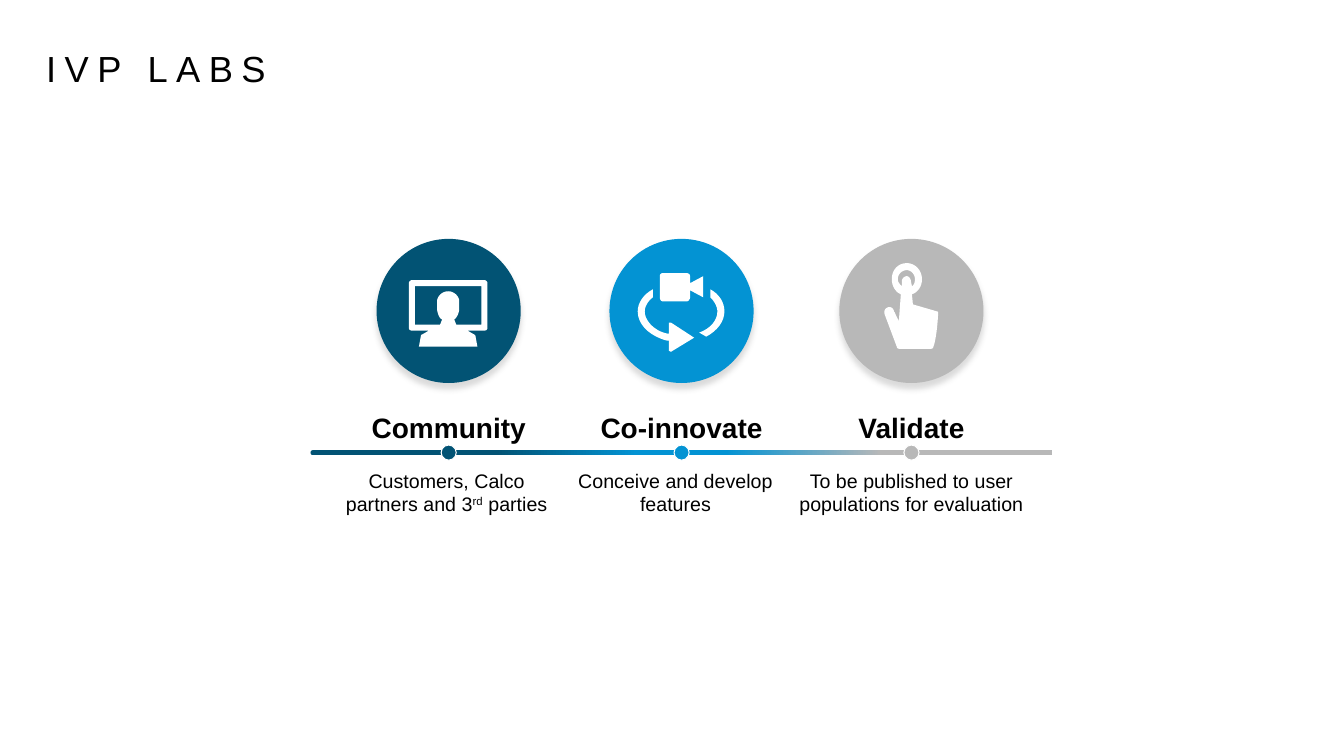
"""Build the IVP LABS slide: three stages with icons along a gradient line."""
from pptx import Presentation
from pptx.dml.color import RGBColor
from pptx.enum.shapes import MSO_SHAPE
from pptx.enum.text import MSO_ANCHOR, PP_ALIGN
from pptx.oxml import parse_xml
from pptx.oxml.ns import nsdecls, qn
from pptx.util import Emu, Inches, Pt


def color(hex_value):
    """Turn a hex string into a colour."""
    return RGBColor.from_string(hex_value)


def flatten(contour, steps=8):
    """Turn points and cubic curves (six numbers) into a list of points."""
    points = []
    for part in contour:
        if len(part) == 2:
            points.append(part)
            continue
        (x0, y0), (x1, y1, x2, y2, x3, y3) = points[-1], part
        for step in range(1, steps + 1):
            t = step / steps
            a, b, c, d = (1 - t) ** 3, 3 * t * (1 - t) ** 2, 3 * t * t * (1 - t), t ** 3
            points.append((a * x0 + b * x1 + c * x2 + d * x3,
                           a * y0 + b * y1 + c * y2 + d * y3))
    return [(round(x * 100), round(y * 100)) for x, y in points]


screen_hole = [
    (104, 85), (79, 85), (77, 80), (80, 78, 82, 73, 82, 69), (82, 62),
    (82, 57, 77, 52, 71, 52), (65, 52, 60, 57, 60, 62), (60, 69),
    (60, 73, 62, 79, 65, 80), (63, 85), (38, 85), (38, 47), (104, 47)]
screen = [
    (107, 41), (35, 41), (33, 41, 32, 43, 32, 44), (32, 88),
    (32, 90, 33, 91, 35, 91), (52, 91), (45, 95), (44, 95, 44, 96, 44, 96),
    (42, 107), (100, 107), (98, 96), (98, 96, 97, 95, 97, 95), (90, 91),
    (107, 91), (109, 91, 110, 90, 110, 88), (110, 44), (110, 43, 109, 41, 107, 41)]
camera = [
    (53, 62), (77, 62), (78, 62, 80, 60, 80, 58), (80, 51), (93, 58), (93, 37),
    (80, 44), (80, 37), (80, 35, 78, 34, 77, 34), (53, 34),
    (51, 34, 50, 35, 50, 37), (50, 58), (50, 60, 51, 62, 53, 62)]
arrow = [
    (59, 83), (59, 94), (56, 94, 54, 93, 51, 92), (42, 88, 35, 80, 35, 72),
    (35, 67, 38, 62, 43, 58), (43, 50), (34, 55, 28, 63, 28, 72),
    (28, 84, 38, 94, 51, 99), (54, 100, 56, 101, 59, 101), (59, 111),
    (61, 112), (84, 98), (61, 83)]
arc = [
    (100, 50), (100, 58), (104, 62, 107, 67, 107, 72), (107, 81, 100, 89, 89, 93),
    (96, 97), (107, 91, 114, 82, 114, 72), (114, 63, 109, 55, 100, 50)]
button_hole = [
    (58, 40), (58, 35, 62, 31, 67, 31), (71, 31, 75, 35, 75, 40),
    (75, 43, 74, 46, 72, 47), (71, 42), (71, 40, 69, 37, 67, 37),
    (64, 37, 62, 40, 62, 42), (62, 47), (60, 45, 58, 43, 58, 40)]
hand = [
    (97, 72), (73, 65), (72, 55), (78, 53, 82, 47, 82, 40), (82, 31, 75, 24, 67, 24),
    (58, 24, 52, 31, 52, 40), (52, 47, 56, 53, 61, 55), (59, 82),
    (59, 81, 56, 76, 55, 73), (54, 72, 54, 71, 54, 71), (53, 68, 50, 67, 48, 68),
    (45, 69, 44, 72, 45, 75), (57, 107), (57, 108, 58, 109, 59, 109), (91, 109),
    (92, 109, 92, 109, 93, 108), (97, 98, 98, 74, 98, 74), (98, 73, 98, 72, 97, 72)]

stages = [
    (4.45, "025374", "Community", [[screen_hole, screen]],
     4.43, 2.21, [("Customers, Calco partners and 3", 0), ("rd", 30000), (" parties", 0)]),
    (6.76, "0393D3", "Co-innovate", [[camera], [arrow], [arc]],
     6.70, 2.28, [("Conceive and develop features", 0)]),
    (9.04, "B8B8B8", "Validate", [[button_hole, hand]],
     9.04, 2.69, [("To be published to user populations for evaluation", 0)]),
]
circle_top, circle_size = 2.37, 1.43
line_left, line_middle, line_width, line_height = 3.08, 4.49, 7.36, 0.05
dot_size = 0.15

presentation = Presentation()
presentation.slide_width, presentation.slide_height = Inches(13.33), Inches(7.5)
slide = presentation.slides.add_slide(presentation.slide_layouts[6])

line = slide.shapes.add_shape(
    MSO_SHAPE.ROUNDED_RECTANGLE, Inches(line_left), Inches(line_middle - line_height / 2),
    Inches(line_width), Inches(line_height))
line.adjustments[0] = 0.5
line.shadow.inherit = False
line.line.fill.background()
line.fill.gradient()
line.fill.gradient_angle = 0
stops = line._element.spPr.find(qn("a:gradFill")).find(qn("a:gsLst"))
for stop in list(stops):
    stops.remove(stop)
for share, hex_value in [(25, "025374"), (44, "0393D3"), (56, "0393D3"), (77, "B8B8B8")]:
    stops.append(parse_xml(
        f'<a:gs {nsdecls("a")} pos="{share * 1000}"><a:srgbClr val="{hex_value}"/></a:gs>'))

texts = [(0.36, 0.49, 12.11, 0.44, 25.9, False, [("IVP LABS", 0)])]
for center, hex_value, name, icon, text_center, text_width, description in stages:
    group = slide.shapes.add_group_shape()
    circle_left = center - circle_size / 2
    circle = group.shapes.add_shape(
        MSO_SHAPE.OVAL, Inches(circle_left), Inches(circle_top),
        Inches(circle_size), Inches(circle_size))
    circle.fill.solid()
    circle.fill.fore_color.rgb = color(hex_value)
    circle.line.fill.background()
    circle.shadow.inherit = False
    circle._element.spPr.find(qn("a:effectLst")).append(parse_xml(
        f'<a:outerShdw {nsdecls("a")} blurRad="50800" dist="50800" dir="5400000">'
        '<a:srgbClr val="A6A6A6"><a:alpha val="40000"/></a:srgbClr></a:outerShdw>'))

    for contours in icon:
        outlines = [flatten(contour) for contour in contours]
        builder = group.shapes.build_freeform(*outlines[0][0], scale=Inches(1) / 10000)
        for outline in outlines:
            builder.move_to(*outline[0])
            builder.add_line_segments(outline[1:], close=True)
        part = builder.convert_to_shape(Inches(circle_left), Inches(circle_top))
        part.fill.solid()
        part.fill.fore_color.rgb = color("FFFFFF")
        part.line.fill.background()
        part.shadow.inherit = False

    dot = slide.shapes.add_shape(
        MSO_SHAPE.OVAL, Inches(center - dot_size / 2), Inches(line_middle - dot_size / 2),
        Inches(dot_size), Inches(dot_size))
    dot.fill.solid()
    dot.fill.fore_color.rgb = color(hex_value)
    dot.line.color.rgb = color("FFFFFF")
    dot.line.width = Pt(0.75)
    dot.shadow.inherit = False

    texts.append((center - 1.95 / 2, 4.02, 1.95, 0.44, 20, True, [(name, 0)]))
    texts.append((text_center - text_width / 2, 4.6, text_width, 0.57, 14, False, description))

for left, top, width, height, size, bold, runs in texts:
    box = slide.shapes.add_textbox(Inches(left), Inches(top), Inches(width), Inches(height))
    frame = box.text_frame
    frame.word_wrap = True
    paragraph = frame.paragraphs[0]
    is_title = size > 20
    paragraph.alignment = PP_ALIGN.LEFT if is_title else PP_ALIGN.CENTER
    if is_title:
        frame.vertical_anchor = MSO_ANCHOR.BOTTOM
        paragraph.line_spacing = 0.7
    for text, baseline in runs:
        run = paragraph.add_run()
        run.text = text
        run.font.name = "Arial"
        run.font.size = Pt(size)
        run.font.bold = bold
        run.font.color.rgb = color("000000")
        if baseline:
            run.font._element.set("baseline", str(baseline))
        if is_title:
            run.font._element.set("spc", "600")

presentation.save("out.pptx")
